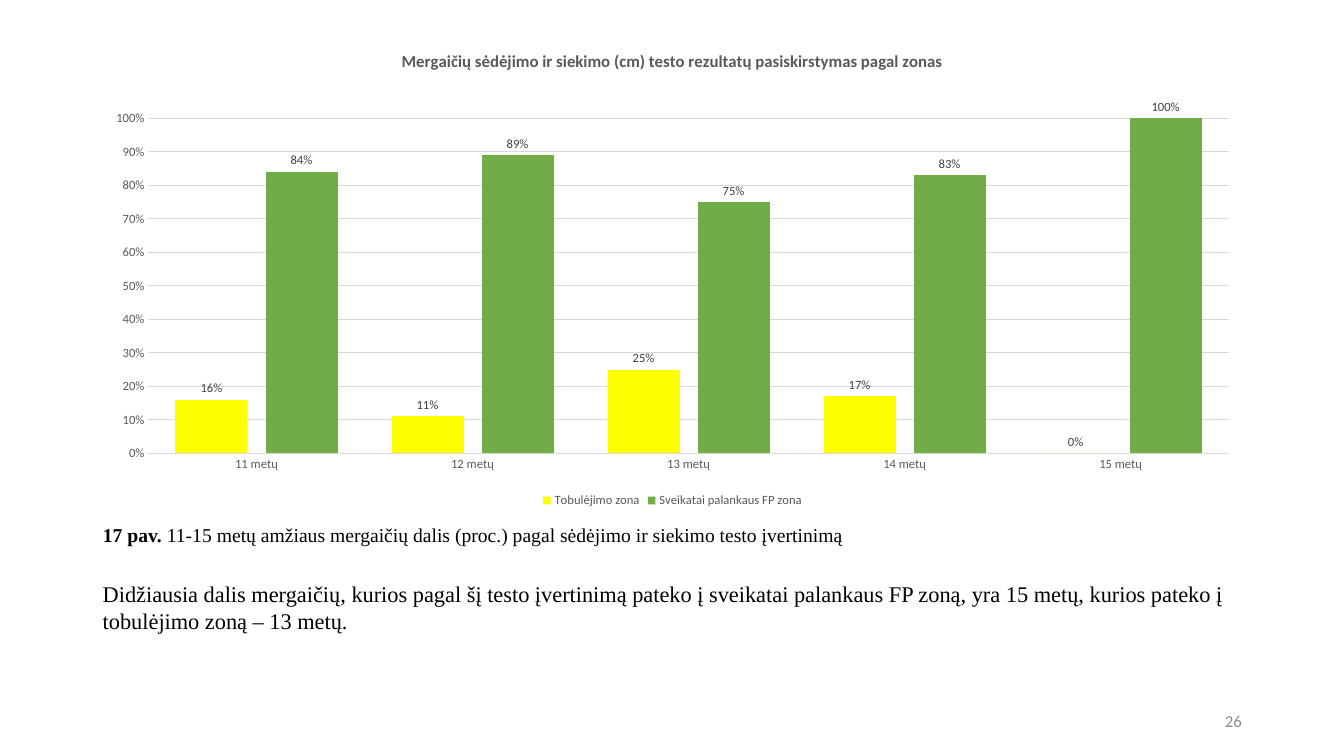
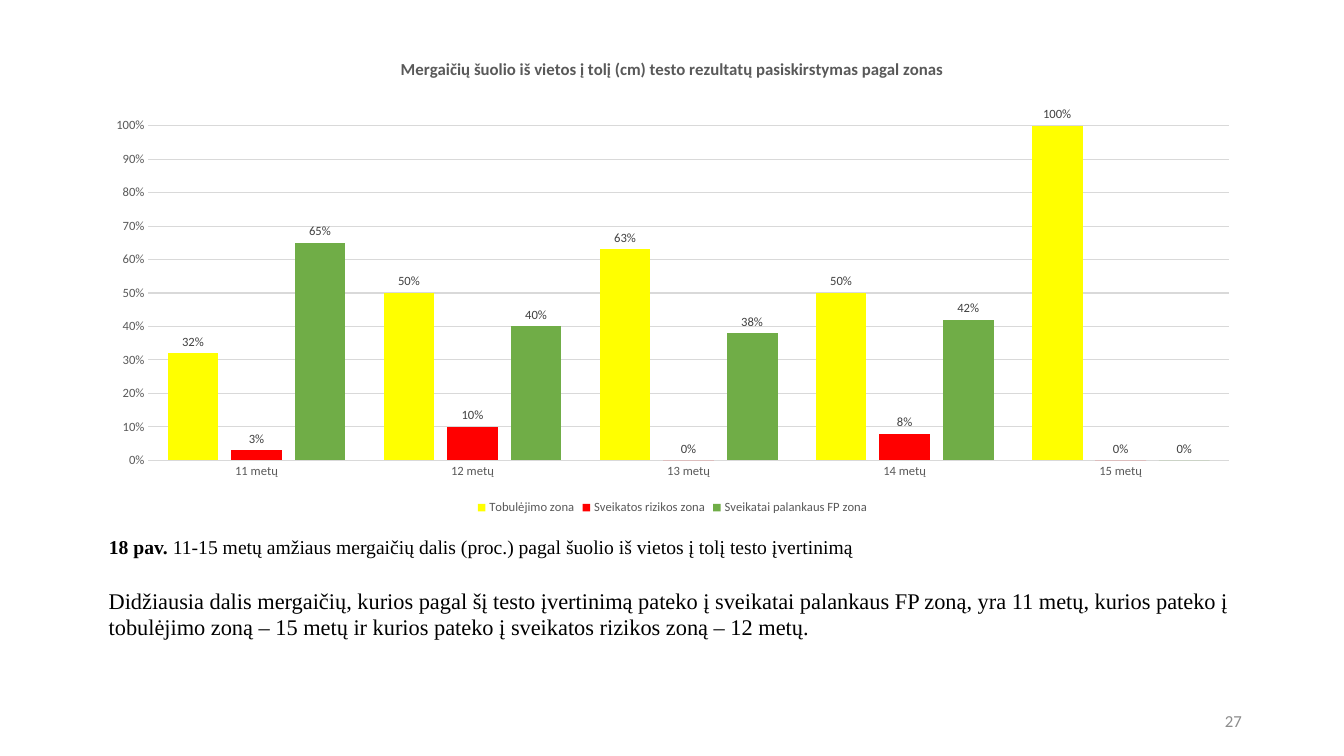
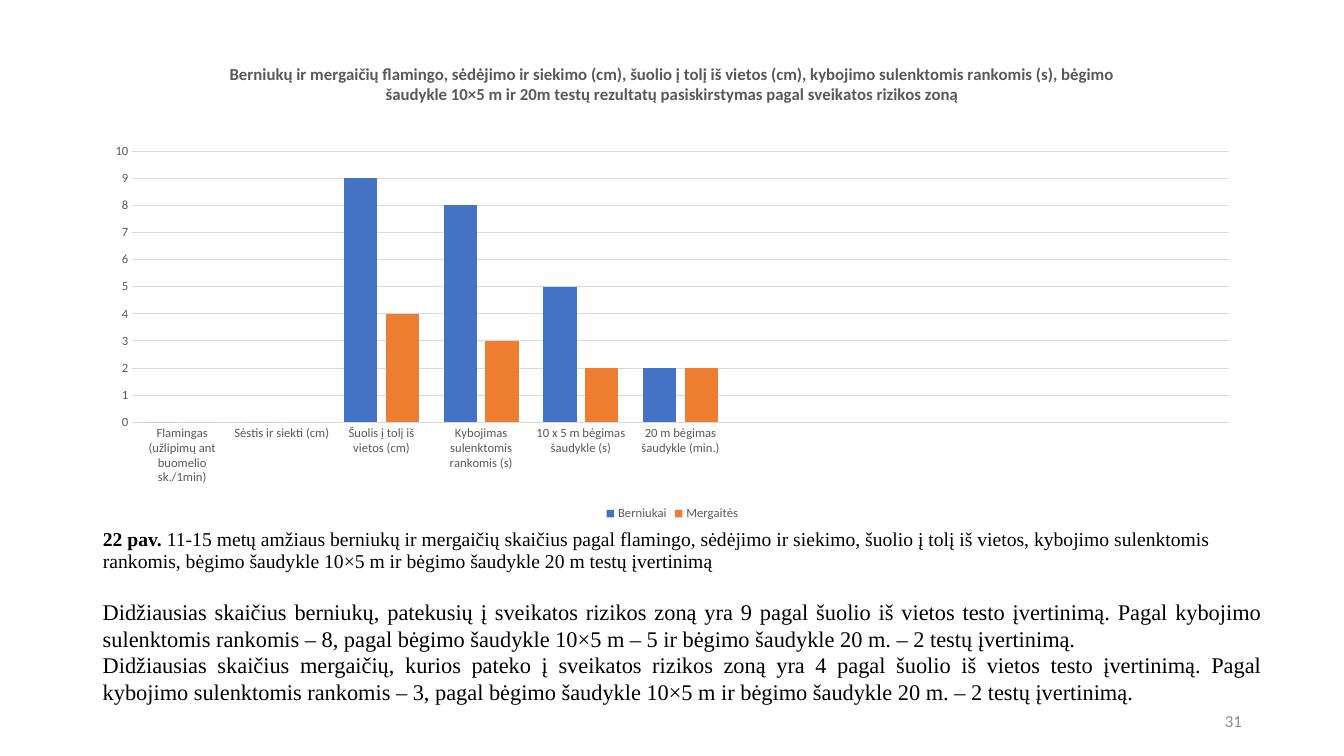
from pptx import Presentation, util as u
from pptx.chart.data import CategoryChartData
from pptx.dml.color import RGBColor
from pptx.enum import chart as ch, text as tx
from pptx.oxml import parse_xml
from pptx.oxml.ns import nsdecls, qn

SERIF, SANS = "Times New Roman", "Calibri"
BLACK, GREY, DARK, PALE, RULE = "000000", "595959", "404040", "8C8C8C", "D9D9D9"
YELLOW, RED, GREEN, BLUE, ORANGE = "FFFF00", "FF0000", "70AD47", "4472C4", "ED7D31"
LEFT, RIGHT, FULL = tx.PP_ALIGN.LEFT, tx.PP_ALIGN.RIGHT, tx.PP_ALIGN.JUSTIFY
MID, TOP = tx.MSO_ANCHOR.MIDDLE, tx.MSO_ANCHOR.TOP
EDGE, WIDE, TALL = 2.34, 29.21, 12.09
AGES = [f"{n} metų" for n in range(11, 16)]
SHARE = dict(max=1, step=0.1, fmt="0%", labels=True, plot=(0.048, 0.18, 0.932, 0.698))
COUNT = dict(max=10, step=1, fmt="General", labels=False, plot=(0.034, 0.221, 0.946, 0.565))

PAGES = [
    dict(
        num="26", top=0.81, scale=SHARE, cats=AGES,
        head="Mergaičių sėdėjimo ir siekimo (cm) testo rezultatų pasiskirstymas pagal zonas",
        rows=[("Tobulėjimo zona", YELLOW, [0.16, 0.11, 0.25, 0.17, 0]),
              ("Sveikatai palankaus FP zona", GREEN, [0.84, 0.89, 0.75, 0.83, 1])],
        fig="17 pav. ", box=(EDGE, 13, WIDE, 1.02),
        cap="11-15 metų amžiaus mergaičių dalis (proc.) pagal sėdėjimo ir siekimo testo įvertinimą",
        body=["Didžiausia dalis mergaičių, kurios pagal šį testo įvertinimą pateko į sveikatai palankaus FP zoną, yra 15 metų, kurios pateko į tobulėjimo zoną – 13 metų."],
        area=(EDGE, 14.5, WIDE, 1.63), align=LEFT),
    dict(
        num="27", top=0.99, scale=SHARE, cats=AGES,
        head="Mergaičių šuolio iš vietos į tolį (cm) testo rezultatų pasiskirstymas pagal zonas",
        rows=[("Tobulėjimo zona", YELLOW, [0.32, 0.5, 0.63, 0.5, 1]),
              ("Sveikatos rizikos zona", RED, [0.03, 0.1, 0, 0.08, 0]),
              ("Sveikatai palankaus FP zona", GREEN, [0.65, 0.4, 0.38, 0.42, 0])],
        fig="18 pav. ", box=(2.49, 13.28, WIDE, 1.04),
        cap="11-15 metų amžiaus mergaičių dalis (proc.) pagal šuolio iš vietos į tolį testo įvertinimą",
        body=["Didžiausia dalis mergaičių, kurios pagal šį testo įvertinimą pateko į sveikatai palankaus FP zoną, yra 11 metų, kurios pateko į tobulėjimo zoną – 15 metų ir kurios pateko į sveikatos rizikos zoną – 12 metų."],
        area=(2.49, 14.66, WIDE, 1.63), align=LEFT),
    dict(
        num="31", top=1.14, scale=COUNT,
        cats=["Flamingas (užlipimų ant buomelio sk./1min)", "Sėstis ir siekti (cm)",
              "Šuolis į tolį iš vietos (cm)", "Kybojimas sulenktomis rankomis (s)",
              "10 x 5 m bėgimas šaudykle (s)", "20 m bėgimas šaudykle (min.)"] + [""] * 5,
        head="Berniukų ir mergaičių flamingo, sėdėjimo ir siekimo (cm), šuolio į tolį iš vietos (cm), kybojimo sulenktomis rankomis (s), bėgimo šaudykle 10×5 m ir 20m testų rezultatų pasiskirstymas pagal sveikatos rizikos zoną",
        rows=[("Berniukai", BLUE, [0, 0, 9, 8, 5, 2] + [None] * 5),
              ("Mergaitės", ORANGE, [0, 0, 4, 3, 2, 2] + [None] * 5)],
        fig="22 pav. ", box=(EDGE, 12.62, WIDE, 2.54),
        cap="11-15 metų amžiaus berniukų ir mergaičių skaičius pagal flamingo, sėdėjimo ir siekimo, šuolio į tolį iš vietos, kybojimo sulenktomis rankomis, bėgimo šaudykle 10×5 m ir bėgimo šaudykle 20 m testų įvertinimą",
        body=["Didžiausias skaičius berniukų, patekusių į sveikatos rizikos zoną yra 9 pagal šuolio iš vietos testo įvertinimą. Pagal kybojimo sulenktomis rankomis – 8, pagal bėgimo šaudykle 10×5 m – 5 ir bėgimo šaudykle 20 m. – 2 testų įvertinimą.",
              "Didžiausias skaičius mergaičių, kurios pateko į sveikatos rizikos zoną yra 4 pagal šuolio iš vietos testo įvertinimą. Pagal kybojimo sulenktomis rankomis – 3, pagal bėgimo šaudykle 10×5 m ir bėgimo šaudykle 20 m. – 2 testų įvertinimą."],
        area=(EDGE, 14.94, 29.72, 3), align=FULL),
]


def rgb(code):
    return RGBColor.from_string(code)


def cms(box):
    return [u.Cm(n) for n in box]


def style(font, size, color, face=SANS, bold=False):
    font.size, font.name, font.bold = u.Pt(size), face, bold
    font.color.rgb = rgb(color)


def write(frame, paras, size=16, face=SERIF, color=BLACK, align=LEFT, anchor=TOP, space=1.0):
    frame.word_wrap = True
    frame.auto_size = tx.MSO_AUTO_SIZE.NONE
    frame.vertical_anchor = anchor
    for i, runs in enumerate(paras):
        para = frame.add_paragraph() if i else frame.paragraphs[0]
        para.alignment, para.line_spacing = align, space
        for words, bold in runs:
            run = para.add_run()
            run.text = words
            style(run.font, size, color, face, bold)


def place(chart, frac):
    area = chart.plots[0]._element.getparent()
    for old in area.findall(qn("c:layout")):
        area.remove(old)
    sizes = "".join(f'<c:{k} val="{v}"/>' for k, v in zip("xywh", frac))
    area.insert(0, parse_xml(
        f'<c:layout {nsdecls("c")}><c:manualLayout><c:layoutTarget val="inner"/>'
        f'<c:xMode val="edge"/><c:yMode val="edge"/>{sizes}</c:manualLayout></c:layout>'))


def draw(slide, page):
    scale = page["scale"]
    data = CategoryChartData(number_format=scale["fmt"])
    data.categories = page["cats"]
    for name, _, vals in page["rows"]:
        data.add_series(name, vals)
    chart = slide.shapes.add_chart(
        ch.XL_CHART_TYPE.COLUMN_CLUSTERED, *cms((EDGE, page["top"], WIDE, TALL)), data).chart
    style(chart.font, 10, BLACK)
    chart.has_title = True
    chart.chart_title.include_in_layout = False
    run = chart.chart_title.text_frame.paragraphs[0].add_run()
    run.text = page["head"]
    style(run.font, 12, GREY, bold=True)
    chart.has_legend = True
    chart.legend.position = ch.XL_LEGEND_POSITION.BOTTOM
    chart.legend.include_in_layout = False
    style(chart.legend.font, 9, GREY)

    cat, val = chart.category_axis, chart.value_axis
    for axis in (cat, val):
        axis.major_tick_mark = axis.minor_tick_mark = ch.XL_TICK_MARK.NONE
        style(axis.tick_labels.font, 9, GREY)
    val.minimum_scale, val.maximum_scale, val.major_unit = 0, scale["max"], scale["step"]
    val.tick_labels.number_format = scale["fmt"]
    val.tick_labels.number_format_is_linked = False
    val.format.line.fill.background()
    val.has_major_gridlines = True
    for line in (cat.format.line, val.major_gridlines.format.line):
        line.color.rgb, line.width = rgb(RULE), u.Pt(0.75)

    plot = chart.plots[0]
    plot.gap_width, plot.overlap, plot.vary_by_categories = 75, -25, False
    for bars, (_, color, _) in zip(plot.series, page["rows"]):
        bars.format.fill.solid()
        bars.format.fill.fore_color.rgb = rgb(color)
        bars.invert_if_negative = False
        if scale["labels"]:
            tags = bars.data_labels
            tags.show_value = True
            tags.position = ch.XL_LABEL_POSITION.OUTSIDE_END
            tags.number_format, tags.number_format_is_linked = scale["fmt"], False
            style(tags.font, 9, DARK)
    place(chart, scale["plot"])


def build(deck, page):
    slide = deck.slides.add_slide(deck.slide_layouts[5])
    title = slide.shapes.title
    title.left, title.top, title.width, title.height = cms(page["box"])
    write(title.text_frame, [[(page["fig"], True), (page["cap"], False)]],
          size=14, anchor=MID, space=0.9)
    draw(slide, page)
    num = slide.shapes.add_textbox(*cms((23.93, 17.65, 7.62, 1.02)))
    write(num.text_frame, [[(page["num"], False)]],
          size=12, face=SANS, color=PALE, align=RIGHT, anchor=MID)
    body = slide.shapes.add_textbox(*cms(page["area"]))
    write(body.text_frame, [[(words, False)] for words in page["body"]], align=page["align"])


def main():
    deck = Presentation()
    deck.slide_width, deck.slide_height = cms((33.87, 19.05))
    for page in PAGES:
        build(deck, page)
    deck.save("out.pptx")


if __name__ == "__main__":
    main()
